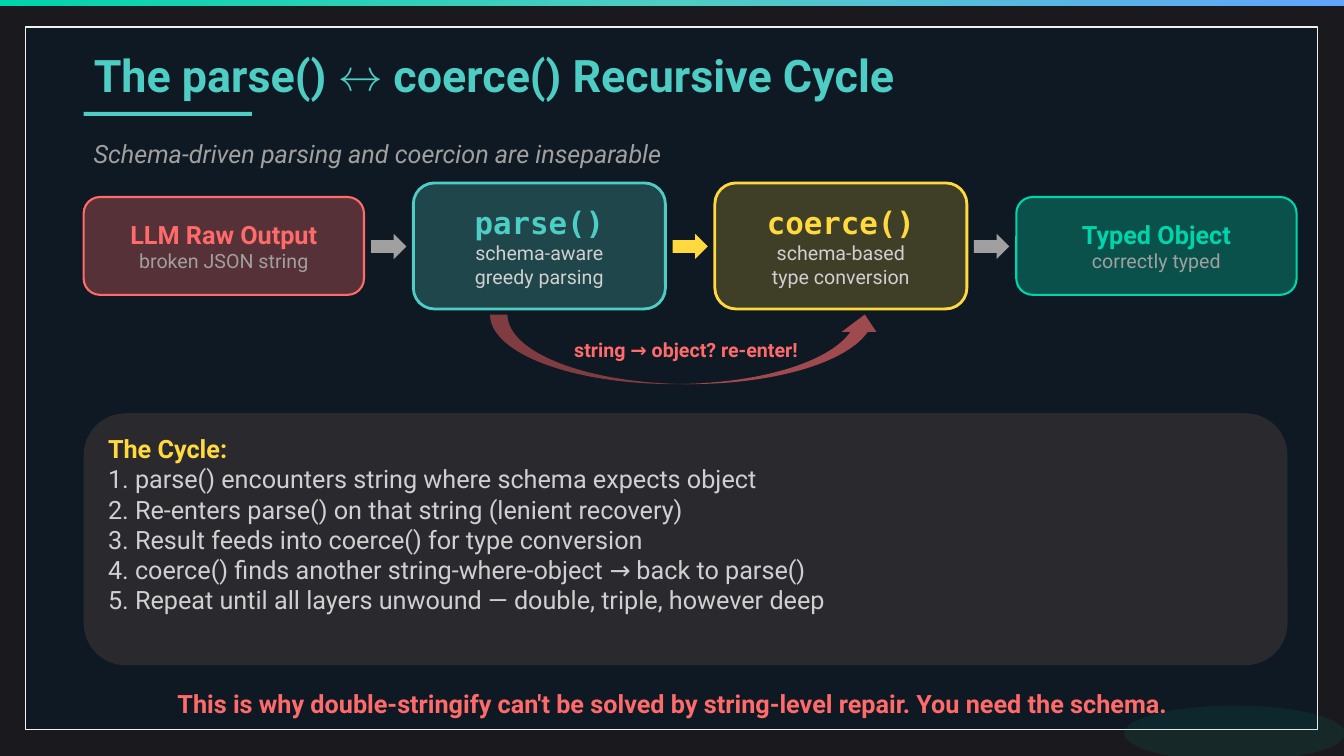
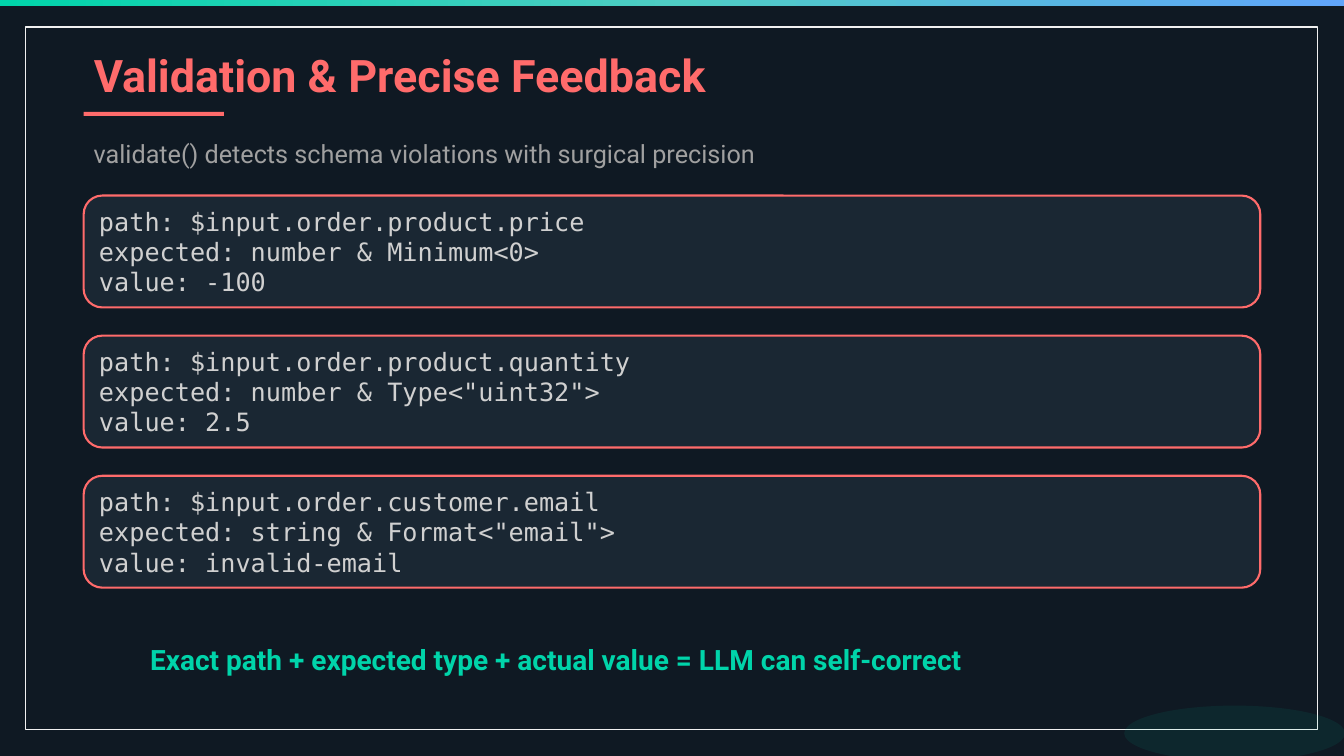
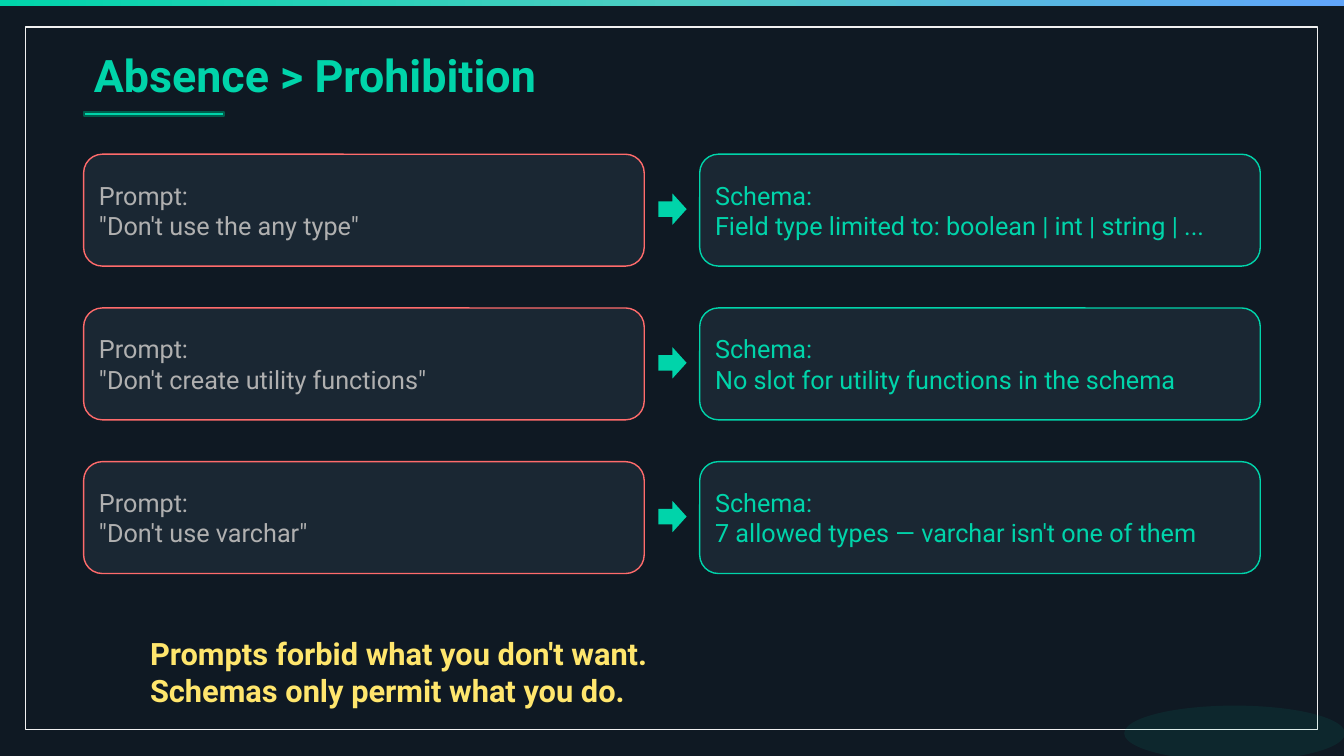
from copy import deepcopy

from lxml import etree
from pptx import Presentation
from pptx.dml.color import RGBColor
from pptx.enum.shapes import MSO_SHAPE
from pptx.enum.text import MSO_ANCHOR, MSO_AUTO_SIZE, PP_ALIGN
from pptx.oxml.ns import qn
from pptx.util import Inches, Pt

RECT = MSO_SHAPE.RECTANGLE
ROUND = MSO_SHAPE.ROUNDED_RECTANGLE
OVAL = MSO_SHAPE.OVAL
ARROW = MSO_SHAPE.RIGHT_ARROW
CURVE = MSO_SHAPE.CURVED_UP_ARROW
TOP, MIDDLE = MSO_ANCHOR.TOP, MSO_ANCHOR.MIDDLE
LEFT, CENTER = PP_ALIGN.LEFT, PP_ALIGN.CENTER
FIXED = MSO_AUTO_SIZE.NONE

NAVY, PANEL, STONE = "0F1923", "1A2733", "2A2A2E"
GREEN, TEAL, BLUE = "00D4AA", "4ECDC4", "60A5FA"
RED, GOLD, LEMON = "FF6B6B", "FFD93D", "FFE66D"
GRAY, SILVER, LIGHT, WHITE = "A0A0A0", "B0B0B0", "D0D0D0", "F0F0F0"

SANS, MONO = "Roboto", "DejaVu Sans Mono"
HEAD = {"name": SANS, "size": Pt(32), "bold": True}
LARGE = {"name": SANS, "size": Pt(22), "bold": True}
CLAIM = {"name": SANS, "size": Pt(20), "bold": True}
STRONG = {"name": SANS, "size": Pt(18), "bold": True}
BODY = {"name": SANS, "size": Pt(18), "bold": False}
SLANT = {"name": SANS, "size": Pt(18), "italic": True}
LABEL = {"name": SANS, "size": Pt(14), "bold": True}
SMALL = {"name": SANS, "size": Pt(14), "bold": False}
CODE = {"name": MONO, "size": Pt(18)}
CALL = {"name": MONO, "size": Pt(22), "bold": True}


def tint(fill, color, alpha=100):
    if color is None:
        fill.background()
        return
    fill.solid()
    fill.fore_color.rgb = RGBColor.from_string(color)
    if alpha < 100:
        tone = fill._xPr.find(qn("a:solidFill"))[0]
        etree.SubElement(tone, qn("a:alpha"), val=str(alpha * 1000))


def draw(slide, kind, box, lines=(), fill=None, alpha=100, edge=None,
         width=1, align=LEFT, anchor=TOP):
    if kind == "title":
        shape = slide.shapes.title
    elif kind == "text":
        shape = slide.shapes.add_textbox(*map(Inches, box))
    else:
        shape = slide.shapes.add_shape(kind, *map(Inches, box))
        shape.shadow.inherit = False
        tint(shape.fill, fill, alpha)
        tint(shape.line.fill, edge)
        if edge:
            shape.line.width = Pt(width)
    frame = shape.text_frame
    frame.word_wrap = True
    frame.vertical_anchor = anchor
    for i, (text, color, style) in enumerate(lines):
        para = frame.add_paragraph() if i else frame.paragraphs[0]
        para.text = text
        para.alignment = align
        for run in para.runs:
            for key, value in style.items():
                setattr(run.font, key, value)
            tint(run.font.fill, color)
    return shape


deck = Presentation()
deck.slide_width, deck.slide_height = Inches(13.33), Inches(7.5)
layout = deck.slide_layouts[5]
tint(layout.background.fill, NAVY)
title, *spare = layout.placeholders
for holder in spare:
    holder.element.getparent().remove(holder.element)
title.left, title.top = Inches(0.83), Inches(0.42)
title.width, title.height = Inches(11.67), Inches(0.69)
title.text_frame.auto_size = FIXED

slides = [deck.slides.add_slide(layout) for _ in range(3)]
cycle, check, absence = slides
tint(cycle.background.fill, "1A1A1E")

panel = draw(cycle, RECT, (0.25, 0.27, 12.82, 6.97), fill=NAVY, edge=WHITE)
band = draw(cycle, RECT, (0, 0, 13.33, 0.06))
band.fill.gradient()
band.fill.gradient_angle = 0
stops = band.element.spPr.find(".//" + qn("a:gsLst"))
stops.append(deepcopy(stops[0]))
for i, (stop, color) in enumerate(zip(band.fill.gradient_stops, (GREEN, TEAL, BLUE))):
    stop.color.rgb = RGBColor.from_string(color)
    stop.position = i / 2
glow = draw(cycle, OVAL, (11.15, 7, 2.19, 0.55), fill=GREEN, alpha=8)
for i, part in enumerate((panel, band, glow)):
    layout.shapes.element.insert(2 + i, part.element)

heads = [
    ("The parse() ↔ coerce() Recursive Cycle", TEAL, 1.67, None),
    ("Validation & Precise Feedback", RED, 1.39, None),
    ("Absence > Prohibition", GREEN, 1.39, "005D4B"),
]
for slide, (text, color, wide, edge) in zip(slides, heads):
    draw(slide, "title", None, [(text, color, HEAD)])
    draw(slide, RECT, (0.83, 1.11, wide, 0.04), fill=color, edge=edge, width=1.5)

leads = [
    (cycle, "Schema-driven parsing and coercion are inseparable", SLANT),
    (check, "validate() detects schema violations with surgical precision", BODY),
]
for slide, text, style in leads:
    draw(slide, "text", (0.83, 1.32, 9.72, 0.35), [(text, GRAY, style)])

steps = [
    (2.78, 0.97, RED, 30, 1.5, GRAY,
     [("LLM Raw Output", RED, STRONG), ("broken JSON string", GRAY, SMALL)]),
    (2.5, 1.25, TEAL, 25, 2, GOLD,
     [("parse()", TEAL, CALL), ("schema-aware", LIGHT, SMALL),
      ("greedy parsing", LIGHT, SMALL)]),
    (2.5, 1.25, GOLD, 20, 2, GRAY,
     [("coerce()", GOLD, CALL), ("schema-based", LIGHT, SMALL),
      ("type conversion", LIGHT, SMALL)]),
    (2.78, 0.97, GREEN, 30, 1.5, None,
     [("Typed Object", GREEN, STRONG), ("correctly typed", GRAY, SMALL)]),
]
x, mid, gap = 0.83, 2.44, 0.07
for wide, high, color, alpha, width, next_hue, lines in steps:
    draw(cycle, ROUND, (x, mid - high / 2, wide, high), lines, color, alpha,
         color, width, CENTER, MIDDLE)
    x += wide + gap
    if next_hue:
        draw(cycle, ARROW, (x, mid - 0.12, 0.35, 0.25), fill=next_hue)
        x += 0.35 + gap

draw(cycle, CURVE, (4.86, 3.12, 3.89, 0.69),
     [("string → object? re-enter!", RED, LABEL)], RED, 60,
     align=CENTER, anchor=MIDDLE)

rules = [
    "1. parse() encounters string where schema expects object",
    "2. Re-enters parse() on that string (lenient recovery)",
    "3. Result feeds into coerce() for type conversion",
    "4. coerce() finds another string-where-object → back to parse()",
    "5. Repeat until all layers unwound — double, triple, however deep",
]
card = draw(cycle, ROUND, (0.83, 4.1, 11.94, 2.5),
            [("The Cycle:", GOLD, STRONG)] + [(rule, LIGHT, BODY) for rule in rules],
            STONE)
insets = {"margin_left": 0.12, "margin_top": 0.08,
          "margin_right": 0.12, "margin_bottom": 0.08}
for key, value in insets.items():
    setattr(card.text_frame, key, Inches(value))

faults = [
    "path: $input.order.product.price\vexpected: number & Minimum<0>\vvalue: -100",
    "path: $input.order.product.quantity\vexpected: number & Type<\"uint32\">\vvalue: 2.5",
    "path: $input.order.customer.email\vexpected: string & Format<\"email\">\vvalue: invalid-email",
]
for i, fault in enumerate(faults):
    draw(check, ROUND, (0.83, 1.94 + 1.39 * i, 11.67, 1.11), [(fault, LIGHT, CODE)],
         PANEL, edge=RED, width=1.5, anchor=MIDDLE)

pairs = [
    ("\"Don't use the any type\"", "Field type limited to: boolean | int | string | ..."),
    ("\"Don't create utility functions\"", "No slot for utility functions in the schema"),
    ("\"Don't use varchar\"", "7 allowed types — varchar isn't one of them"),
]
for i, (prompt, schema) in enumerate(pairs):
    y = 1.53 + 1.525 * i
    draw(absence, ROUND, (0.83, y, 5.56, 1.11), [("Prompt:\v" + prompt, SILVER, BODY)],
         PANEL, edge=RED, anchor=MIDDLE)
    draw(absence, ARROW, (6.53, y + 0.39, 0.28, 0.31), fill=GREEN)
    draw(absence, ROUND, (6.94, y, 5.56, 1.11), [("Schema:\v" + schema, GREEN, BODY)],
         PANEL, edge=GREEN, anchor=MIDDLE)

ends = [
    (cycle, 6.78, 0.39, "This is why double-stringify can't be solved by "
     "string-level repair. You need the schema.", RED, STRONG, CENTER),
    (check, 6.32, 0.42, "Exact path + expected type + actual value = "
     "LLM can self-correct", GREEN, CLAIM, LEFT),
    (absence, 6.25, 0.69, "Prompts forbid what you don't want.\v"
     "Schemas only permit what you do.", LEMON, LARGE, LEFT),
]
for slide, y, high, text, color, style, align in ends:
    draw(slide, "text", (1.39, y, 10.56, high), [(text, color, style)], align=align)

deck.save("out.pptx")
